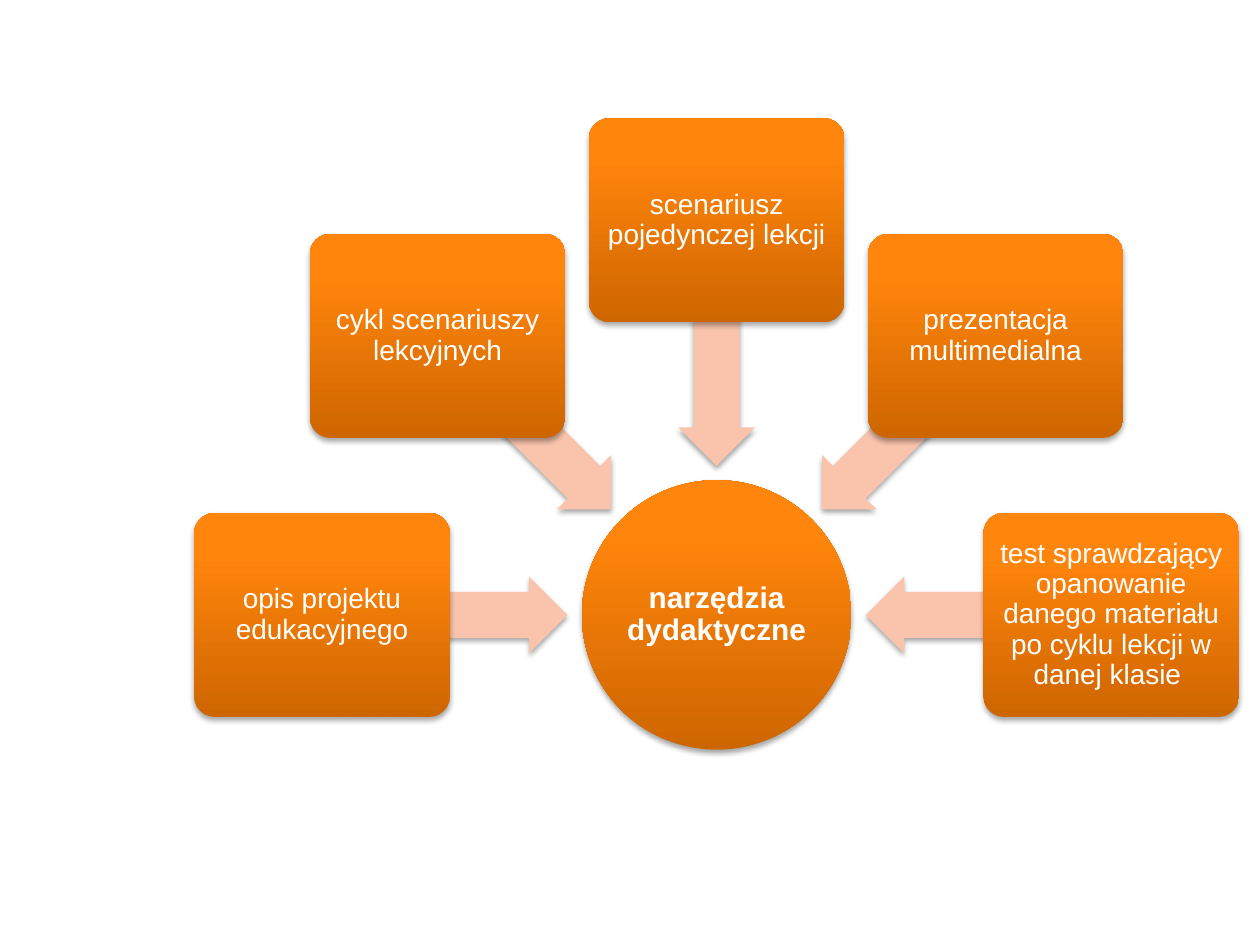
from math import cos, radians, sin

from pptx import Presentation
from pptx.dml.color import RGBColor
from pptx.enum.shapes import MSO_SHAPE
from pptx.enum.text import MSO_ANCHOR, PP_ALIGN
from pptx.oxml import parse_xml
from pptx.oxml.ns import nsdecls
from pptx.util import Pt

ELLIPSE = MSO_SHAPE.OVAL
CARD = MSO_SHAPE.ROUNDED_RECTANGLE
ARROW = MSO_SHAPE.LEFT_ARROW
CENTER = PP_ALIGN.CENTER
MIDDLE = MSO_ANCHOR.MIDDLE

COLORS = {
    "dark": "CE6600",
    "mid": "FF850C",
    "light": "FF850E",
    "arrow": "FAC4AC",
    "text": "FFFFFF",
    "shadow": "000000",
}
FONT = "Arial"

HUB_SIZE = 154
CARD_WIDTH, CARD_HEIGHT = 146, 116.6
ARROW_LENGTH, ARROW_WIDTH = 140.4, 43.9
ARROW_DISTANCE = 155.5

HUB_TEXT = "narzędzia dydaktyczne"
# Direction from the hub in clockwise degrees, then the card text
TOOLS = [
    (180, "opis projektu edukacyjnego"),
    (225, "cykl scenariuszy lekcyjnych"),
    (270, "scenariusz pojedynczej lekcji"),
    (315, "prezentacja multimedialna"),
    (0, "test sprawdzający opanowanie danego materiału po cyklu lekcji w danej klasie "),
]


def add_centered_shape(shapes, kind, center_x, center_y, width, height):
    """Add a shape around its centre, with no line and a soft shadow below."""
    shape = shapes.add_shape(kind, Pt(center_x - width / 2), Pt(center_y - height / 2),
                             Pt(width), Pt(height))
    shape.line.fill.background()
    shape.shadow.inherit = False
    effects = shape._element.spPr.find("{*}effectLst")
    effects.append(parse_xml(
        f'<a:outerShdw {nsdecls("a")} blurRad="{Pt(3.1)}" dist="{Pt(1.8)}" dir="5400000" '
        f'rotWithShape="0"><a:srgbClr val="{COLORS["shadow"]}"><a:alpha val="35000"/>'
        '</a:srgbClr></a:outerShdw>'))
    return shape


def fill_gradient(shape):
    """Shade the shape from dark at the bottom to light at the top."""
    stops = "".join(
        f'<a:gs pos="{position * 1000}"><a:srgbClr val="{COLORS[name]}"/></a:gs>'
        for position, name in ((0, "dark"), (80, "mid"), (100, "light")))
    gradient = parse_xml(
        f'<a:gradFill {nsdecls("a")} rotWithShape="1"><a:gsLst>{stops}</a:gsLst>'
        '<a:lin ang="16200000" scaled="0"/></a:gradFill>')
    shape._element.spPr.find("{*}prstGeom").addnext(gradient)


def write_label(shape, text, size, inset, bold=False):
    frame = shape.text_frame
    frame.word_wrap = True
    frame.vertical_anchor = MIDDLE
    frame.margin_left = frame.margin_right = Pt(inset)
    frame.margin_top = frame.margin_bottom = Pt(inset)
    paragraph = frame.paragraphs[0]
    paragraph.alignment = CENTER
    paragraph.line_spacing = 0.9
    run = paragraph.add_run()
    run.text = text
    run.font.name = FONT
    run.font.size = Pt(size)
    run.font.bold = bold
    run.font.color.rgb = RGBColor.from_string(COLORS["text"])


def add_radial_diagram(slide, left, top, width, height):
    """Place the hub at the bottom middle of the box and the cards on an arc."""
    shapes = slide.shapes.add_group_shape().shapes
    hub_x = left + width / 2
    hub_y = top + height - HUB_SIZE / 2
    card_distance = (width - CARD_WIDTH) / 2

    # Hub
    hub = add_centered_shape(shapes, ELLIPSE, hub_x, hub_y, HUB_SIZE, HUB_SIZE)
    fill_gradient(hub)
    write_label(hub, HUB_TEXT, 17, 0.8, bold=True)

    for angle, text in TOOLS:
        across, down = cos(radians(angle)), sin(radians(angle))

        # Arrow pointing at the hub
        arrow = add_centered_shape(shapes, ARROW, hub_x + ARROW_DISTANCE * across,
                                   hub_y + ARROW_DISTANCE * down, ARROW_LENGTH, ARROW_WIDTH)
        arrow.adjustments[0] = 0.6
        arrow.adjustments[1] = 0.5
        arrow.rotation = angle
        arrow.fill.solid()
        arrow.fill.fore_color.rgb = RGBColor.from_string(COLORS["arrow"])

        # Card over the tail of the arrow
        card = add_centered_shape(shapes, CARD, hub_x + card_distance * across,
                                  hub_y + card_distance * down, CARD_WIDTH, CARD_HEIGHT)
        card.adjustments[0] = 0.1
        fill_gradient(card)
        write_label(card, text, 16, 2.4)


def main():
    presentation = Presentation()
    presentation.slide_width, presentation.slide_height = Pt(720), Pt(540)
    slide = presentation.slides.add_slide(presentation.slide_layouts[6])
    add_radial_diagram(slide, 111, 67, 597, 361.4)
    presentation.save("out.pptx")


if __name__ == "__main__":
    main()
